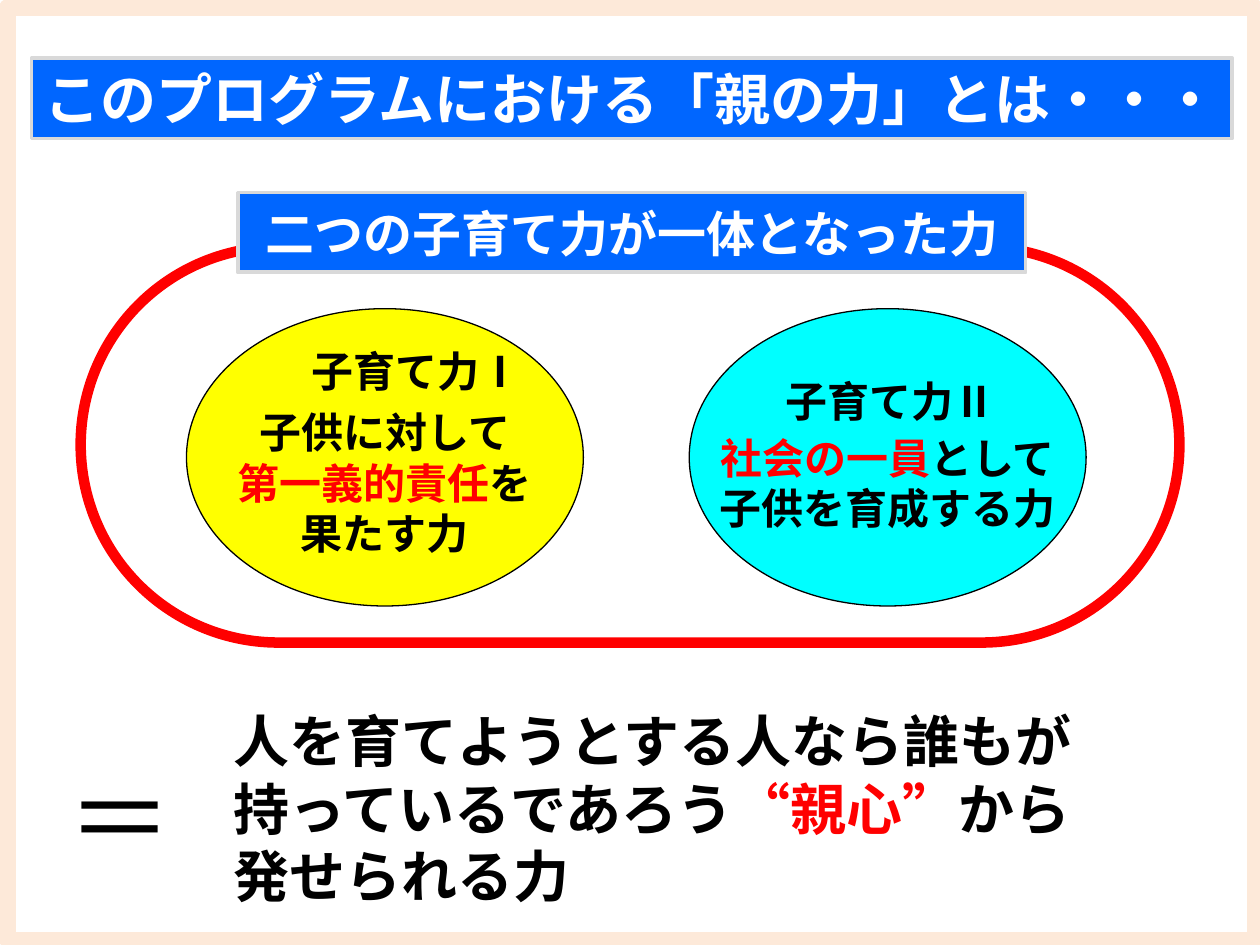
from typing import NamedTuple

from pptx import Presentation
from pptx.dml.color import RGBColor
from pptx.enum.shapes import MSO_SHAPE
from pptx.enum.text import MSO_ANCHOR, MSO_AUTO_SIZE, PP_ALIGN
from pptx.oxml.ns import qn
from pptx.util import Inches, Pt

RECT, OVAL = MSO_SHAPE.RECTANGLE, MSO_SHAPE.OVAL
ROUND, BEVEL = MSO_SHAPE.ROUNDED_RECTANGLE, MSO_SHAPE.BEVEL
MIDDLE, NO_FIT = MSO_ANCHOR.MIDDLE, MSO_AUTO_SIZE.NONE
LEFT, CENTER = PP_ALIGN.LEFT, PP_ALIGN.CENTER

FONT = "Noto Sans CJK JP"
BLACK, WHITE, RED = "000000", "FFFFFF", "FF0000"
BLUE, GRAY, PEACH = "0066FF", "D9D9D9", "FDE9D9"
YELLOW, CYAN = "FFFF00", "00FFFF"
PITCH = 1.2


class Box(NamedTuple):
    left: float
    top: float
    width: float
    height: float


class Power(NamedTuple):
    left: float
    fill: str
    label: str
    spot: Box
    lines: list[str]
    accent: str


POWERS = [
    Power(1.48, YELLOW, "子育て力Ⅰ", Box(2.43, 2.65, 1.75, 0.58),
          ["子供に対して", "第一義的責任を", "果たす力"], "第一義的責任"),
    Power(5.47, CYAN, "子育て力Ⅱ", Box(6.19, 2.89, 1.75, 0.58),
          ["社会の一員として", "子供を育成する力"], "社会の一員"),
]


def rgb(code: str) -> RGBColor:
    return RGBColor.from_string(code)


def place(shape, box: Box) -> None:
    shape.left, shape.top, shape.width, shape.height = map(Inches, box)


def paint(shape, fill: str | None, line: str, width: float) -> None:
    if fill:
        shape.fill.solid()
        shape.fill.fore_color.rgb = rgb(fill)
    else:
        shape.fill.background()
    shape.line.color.rgb = rgb(line)
    shape.line.width = Pt(width)


def draw(slide, kind, box: Box, fill: str | None, line: str, width: float):
    shape = slide.shapes.add_shape(kind, *map(Inches, box))
    shape.shadow.inherit = False
    paint(shape, fill, line, width)
    return shape


def split(text: str, accent: str) -> list[str]:
    """Cut the text around the accent, keeping the accent as a part."""
    if not accent or accent not in text:
        return [text]
    head, tail = text.split(accent)
    return [part for part in (head, accent, tail) if part]


def write(shape, lines: list[str], size: float, color: str = BLACK,
          align=CENTER, bold: bool = True, wrap: bool = False,
          accent: str = "") -> None:
    frame = shape.text_frame
    frame.text = "\n".join(lines)
    frame.word_wrap = wrap
    frame.auto_size = NO_FIT
    frame.vertical_anchor = MIDDLE
    for para, line in zip(frame.paragraphs, lines):
        para.alignment = align
        para.space_before = Pt(0)
        if len(lines) > 1:
            para.line_spacing = Pt(size * PITCH)
        parts = split(line, accent)
        para.runs[0].text = parts[0]
        for part in parts[1:]:
            para.add_run().text = part
        for run in para.runs:
            font = run.font
            font.name, font.size, font.bold = FONT, Pt(size), bold
            font.color.rgb = rgb(RED if run.text == accent else color)
            # The East Asian font would set curly quotes at full width
            if "“" not in run.text:
                east = font._element.makeelement(qn("a:ea"),
                                                 {"typeface": FONT})
                font._element.find(qn("a:latin")).addnext(east)


def label(slide, box: Box, text: str, size: float, bold: bool = True) -> None:
    shape = slide.shapes.add_textbox(*map(Inches, box))
    write(shape, [text], size, bold=bold)


def add_power(slide, power: Power) -> None:
    oval = draw(slide, OVAL, Box(power.left, 2.45, 3.15, 2.36),
                power.fill, BLACK, 0.75)
    write(oval, power.lines, 24, accent=power.accent)
    # Leave room for the label above the lines
    oval.text_frame.margin_top = Inches(0.4)
    oval.text_frame.margin_bottom = Inches(0)
    label(slide, power.spot, power.label, 24)


def add_title(slide) -> None:
    title = slide.shapes.title
    place(title, Box(0.25, 0.46, 9.53, 0.64))
    paint(title, BLUE, GRAY, 2)
    write(title, ["このプログラムにおける「親の力」とは・・・"], 32, WHITE)
    title.text_frame.margin_left = title.text_frame.margin_right = Inches(0)


def add_body(slide) -> None:
    body = slide.placeholders[1]
    place(body, Box(1.75, 5.33, 6.95, 2.16))
    write(body, ["人を育てようとする人なら誰もが",
                 "持っているであろう“親心”から",
                 "発せられる力"], 32, align=LEFT, wrap=True, accent="“親心”")
    for para in body.text_frame.paragraphs:
        props = para._p.get_or_add_pPr()
        props.set("marL", "0")
        props.set("indent", "0")
        props.append(props.makeelement(qn("a:buNone"), {}))


def main() -> None:
    deck = Presentation()
    deck.slide_width, deck.slide_height = Inches(10), Inches(7.5)
    slide = deck.slides.add_slide(deck.slide_layouts[1])

    add_title(slide)
    add_body(slide)
    for power in POWERS:
        add_power(slide, power)
    label(slide, Box(0.5, 5.97, 0.91, 1), "＝", 60, bold=False)

    draw(slide, RECT, Box(0.06, 0.06, 9.9, 7.4), None, PEACH, 9.5)
    ring = draw(slide, ROUND, Box(0.64, 1.96, 8.72, 3.14), None, RED, 6)
    ring.adjustments[0] = 0.5
    banner = draw(slide, BEVEL, Box(1.89, 1.53, 6.25, 0.63), BLUE, GRAY, 2)
    banner.adjustments[0] = 0
    write(banner, ["二つの子育て力が一体となった力"], 28, WHITE)

    deck.save("out.pptx")


if __name__ == "__main__":
    main()
